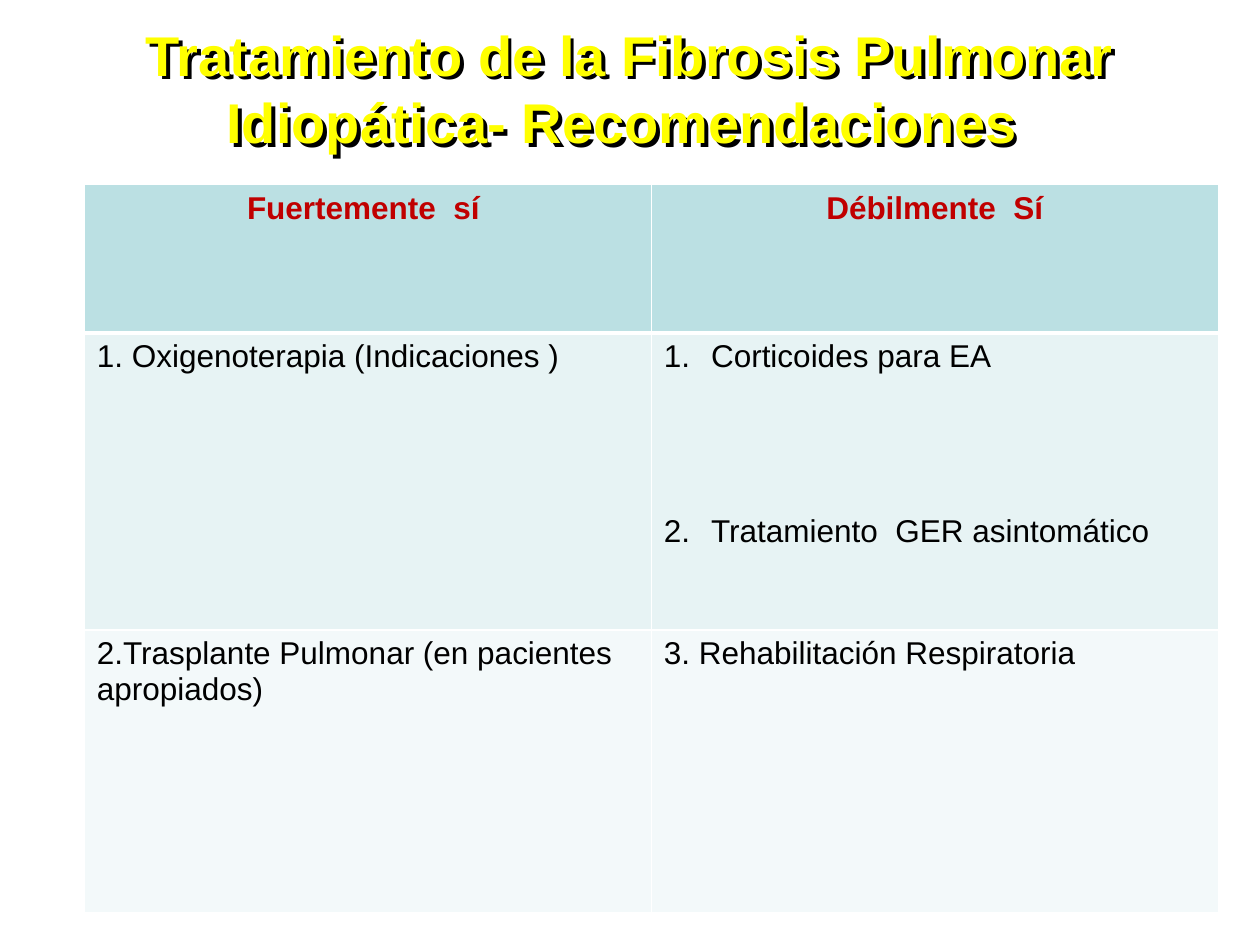
from pptx import Presentation
from pptx.dml.color import RGBColor
from pptx.enum.text import MSO_ANCHOR, PP_ALIGN
from pptx.oxml import parse_xml
from pptx.oxml.ns import nsdecls
from pptx.util import Cm, Pt

CENTER, LEFT = PP_ALIGN.CENTER, PP_ALIGN.LEFT
MIDDLE = MSO_ANCHOR.MIDDLE
BLANK_LAYOUT = 6
COLORS = {
    "title": "FFFF00", "heading": "C00000", "text": "000000", "line": "FFFFFF",
    "header_fill": "BBE0E3", "odd_fill": "E7F3F4", "even_fill": "F3F9FA",
}
ROW_FILLS = ["header_fill", "odd_fill", "even_fill"]
COLUMN_WIDTHS = [11.43, 11.43]
ROW_HEIGHTS = [2.99, 5.99, 5.7]
NUMBERED_GAP = 80

TITLE = "Tratamiento de la Fibrosis Pulmonar Idiopática- Recomendaciones "
ROWS = [
    ["Fuertemente  sí ", "Débilmente  Sí"],
    ["1. Oxigenoterapia (Indicaciones )",
     ["Corticoides para EA", "Tratamiento  GER asintomático"]],
    ["2.Trasplante Pulmonar (en pacientes apropiados)",
     "3. Rehabilitación Respiratoria"],
]


class SlideBuilder:
    def __init__(self, page, font="Arial"):
        self.page = page
        self.font = font

    def style(self, para, size, color, bold=False, align=LEFT):
        para.alignment = align
        for span in para.runs:
            span.font.name = self.font
            span.font.size = Pt(size)
            span.font.bold = bold
            span.font.color.rgb = RGBColor.from_string(COLORS[color])

    def shadow(self, box):
        """Add a hard shadow, which falls from the letters of an unfilled box."""
        box.fill.background()
        box._element.spPr.append(parse_xml(
            f'<a:effectLst {nsdecls("a")}><a:outerShdw dist="{Pt(3)}" dir="2700000" '
            f'algn="tl"><a:srgbClr val="{COLORS["text"]}"/></a:outerShdw></a:effectLst>'))

    def title(self, text, left, top, width, height):
        box = self.page.shapes.add_textbox(Cm(left), Cm(top), Cm(width), Cm(height))
        self.shadow(box)
        frame = box.text_frame
        frame.word_wrap = True
        frame.vertical_anchor = MIDDLE
        frame.text = text
        self.style(frame.paragraphs[0], 32, "title", bold=True, align=CENTER)

    def numbered(self, para):
        """Give the paragraph an automatic number and a hanging indent."""
        properties = para._p.get_or_add_pPr()
        properties.set("marL", str(Cm(0.95)))
        properties.set("indent", str(Cm(-0.95)))
        properties.append(parse_xml(
            f'<a:buFont {nsdecls("a")} typeface="+mj-lt"/>'))
        properties.append(parse_xml(
            f'<a:buAutoNum {nsdecls("a")} type="arabicPeriod"/>'))

    def borders(self, cell, top, bottom):
        properties = cell._tc.get_or_add_tcPr()
        for side, width in (("L", 1), ("R", 1), ("T", top), ("B", bottom)):
            properties.append(parse_xml(
                f'<a:ln{side} {nsdecls("a")} w="{Pt(width)}"><a:solidFill>'
                f'<a:srgbClr val="{COLORS["line"]}"/></a:solidFill></a:ln{side}>'))

    def cell(self, cell, content, row):
        self.borders(cell, top=3 if row == 1 else 1, bottom=3 if row == 0 else 1)
        cell.fill.solid()
        cell.fill.fore_color.rgb = RGBColor.from_string(COLORS[ROW_FILLS[row]])
        is_list = isinstance(content, list)
        cell.text_frame.text = "\n".join(content) if is_list else content
        for index, para in enumerate(cell.text_frame.paragraphs):
            if index:
                para.space_before = Pt(NUMBERED_GAP)
            if is_list:
                self.numbered(para)
            if row == 0:
                self.style(para, 18, "heading", bold=True, align=CENTER)
            else:
                self.style(para, 18, "text")

    def table(self, rows, left, top):
        frame = self.page.shapes.add_table(
            len(rows), len(COLUMN_WIDTHS), Cm(left), Cm(top),
            Cm(sum(COLUMN_WIDTHS)), Cm(sum(ROW_HEIGHTS)))
        table = frame.table
        for column, width in zip(table.columns, COLUMN_WIDTHS):
            column.width = Cm(width)
        for line, height in zip(table.rows, ROW_HEIGHTS):
            line.height = Cm(height)
        for row, contents in enumerate(rows):
            for column, content in enumerate(contents):
                self.cell(table.cell(row, column), content, row)


def main():
    deck = Presentation()
    deck.slide_width, deck.slide_height = Cm(25.4), Cm(19.05)
    builder = SlideBuilder(deck.slides.add_slide(deck.slide_layouts[BLANK_LAYOUT]))
    builder.title(TITLE, 1.27, 0, 22.86, 3.53)
    builder.table(ROWS, 1.7, 3.72)
    deck.save("out.pptx")


if __name__ == "__main__":
    main()
